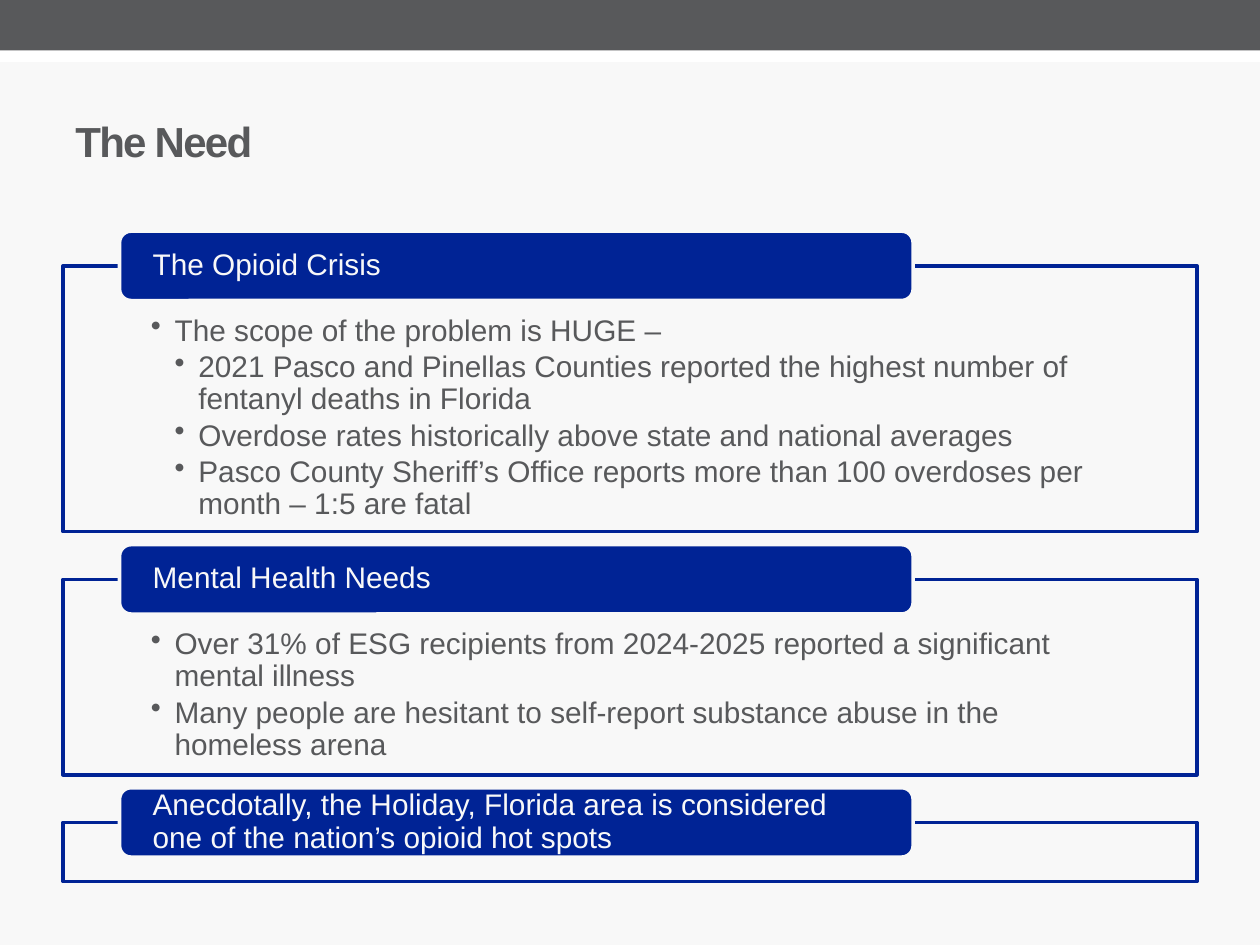
"""Build the slide "The Need": three outlined panels, each with a heading tab."""
from dataclasses import dataclass

from lxml.etree import SubElement
from pptx import Presentation
from pptx.dml.color import RGBColor
from pptx.enum.shapes import MSO_SHAPE as Shp
from pptx.enum.text import MSO_ANCHOR as Anchor, PP_ALIGN as Align
from pptx.oxml.ns import qn
from pptx.util import Cm, Pt

BLUE, GREY, PALE, WHITE = "002395", "58595B", "F8F8F8", "FFFFFF"
LEFT, WIDTH, FIRST_TOP, GAP = 1.27, 22.86, 5.36, 0.96
TAB_LEFT, TAB_WIDTH, TAB_HEIGHT = 2.41, 16, 1.4
INDENT = 0.48


@dataclass
class Bullet:
    text: str
    level: int = 0


@dataclass
class Panel:
    heading: str
    height: float
    bullets: tuple[Bullet, ...] = ()


PANELS = (
    Panel("The Opioid Crisis", 5.36, (
        Bullet("The scope of the problem is HUGE –"),
        Bullet("2021 Pasco and Pinellas Counties reported the highest number of "
               "fentanyl deaths in Florida", 1),
        Bullet("Overdose rates historically above state and national averages", 1),
        Bullet("Pasco County Sheriff’s Office reports more than 100 overdoses per "
               "month – 1:5 are fatal", 1),
    )),
    Panel("Mental Health Needs", 3.94, (
        Bullet("Over 31% of ESG recipients from 2024-2025 reported a significant "
               "mental illness"),
        Bullet("Many people are hesitant to self-report substance abuse in the "
               "homeless arena"),
    )),
    Panel("Anecdotally, the Holiday, Florida area is considered one of the "
          "nation’s opioid hot spots", 1.19),
)


def paint(target, color: str) -> None:
    if hasattr(target, "solid"):
        target.solid()
        target = target.fore_color
    target.rgb = RGBColor.from_string(color)


def apply(target, values: dict) -> None:
    for name, value in values.items():
        setattr(target, name, value)


def add_box(s, kind, left, top, width, height, fill, line=None):
    sp = s.shapes.add_shape(kind, Cm(left), Cm(top), Cm(width), Cm(height))
    sp.shadow.inherit = False
    paint(sp.fill, fill)
    if line:
        paint(sp.line.fill, line)
        sp.line.width = Pt(2.08)
    else:
        sp.line.fill.background()
    return sp


def set_frame(tf, anchor, side: float, top: float = 0, bottom: float = 0) -> None:
    apply(tf, {"word_wrap": True, "vertical_anchor": anchor,
               "margin_left": Cm(side), "margin_right": Cm(side),
               "margin_top": Cm(top), "margin_bottom": Cm(bottom)})


def write(p, text: str, color: str, size: float = 17, bold: bool = False):
    r = p.add_run()
    r.text = text
    apply(r.font, {"name": "Arial", "size": Pt(size), "bold": bold})
    paint(r.font.color, color)
    return r


def write_bullet(p, bullet: Bullet) -> None:
    apply(p, {"alignment": Align.LEFT, "level": bullet.level,
              "line_spacing": 0.9, "space_after": Pt(2.5)})
    pPr = p._p.get_or_add_pPr()
    pPr.set("marL", str(Cm(INDENT * (bullet.level + 1))))
    pPr.set("indent", str(Cm(-INDENT)))
    SubElement(pPr, qn("a:buChar")).set("char", "•")
    write(p, bullet.text, GREY)


def add_panel(s, panel: Panel, top: float) -> None:
    sp = add_box(s, Shp.RECTANGLE, LEFT, top, WIDTH, panel.height, PALE, BLUE)
    color = sp._element.spPr.find(qn("a:solidFill"))[0]
    SubElement(color, qn("a:alpha")).set("val", "90000")
    tf = sp.text_frame
    set_frame(tf, Anchor.TOP, 1.77, 1, 0.33)
    for i, bullet in enumerate(panel.bullets):
        write_bullet(tf.add_paragraph() if i else tf.paragraphs[0], bullet)

    tab = add_box(s, Shp.ROUNDED_RECTANGLE, TAB_LEFT, top - TAB_HEIGHT / 2,
                  TAB_WIDTH, TAB_HEIGHT, BLUE, PALE)
    set_frame(tab.text_frame, Anchor.MIDDLE, 0.6)
    p = tab.text_frame.paragraphs[0]
    apply(p, {"alignment": Align.LEFT, "line_spacing": 0.9})
    write(p, panel.heading, PALE)


def add_title(s, text: str) -> None:
    tf = s.shapes.add_textbox(Cm(LEFT), Cm(1.47), Cm(WIDTH), Cm(2.74)).text_frame
    set_frame(tf, Anchor.MIDDLE, 0.25, 0.13, 0.13)
    r = write(tf.paragraphs[0], text, GREY, 24, True)
    r._r.get_or_add_rPr().set("spc", "-100")


def main() -> None:
    prs = Presentation()
    apply(prs, {"slide_width": Cm(25.4), "slide_height": Cm(19.05)})
    s = prs.slides.add_slide(prs.slide_layouts[6])
    paint(s.background.fill, PALE)
    add_box(s, Shp.RECTANGLE, 0, 0.61, 25.4, 0.64, WHITE)
    add_box(s, Shp.RECTANGLE, 0, 0, 25.4, 1.02, GREY)
    add_title(s, "The Need")
    top = FIRST_TOP
    for panel in PANELS:
        add_panel(s, panel, top)
        top += panel.height + GAP
    prs.save("out.pptx")


if __name__ == "__main__":
    main()
